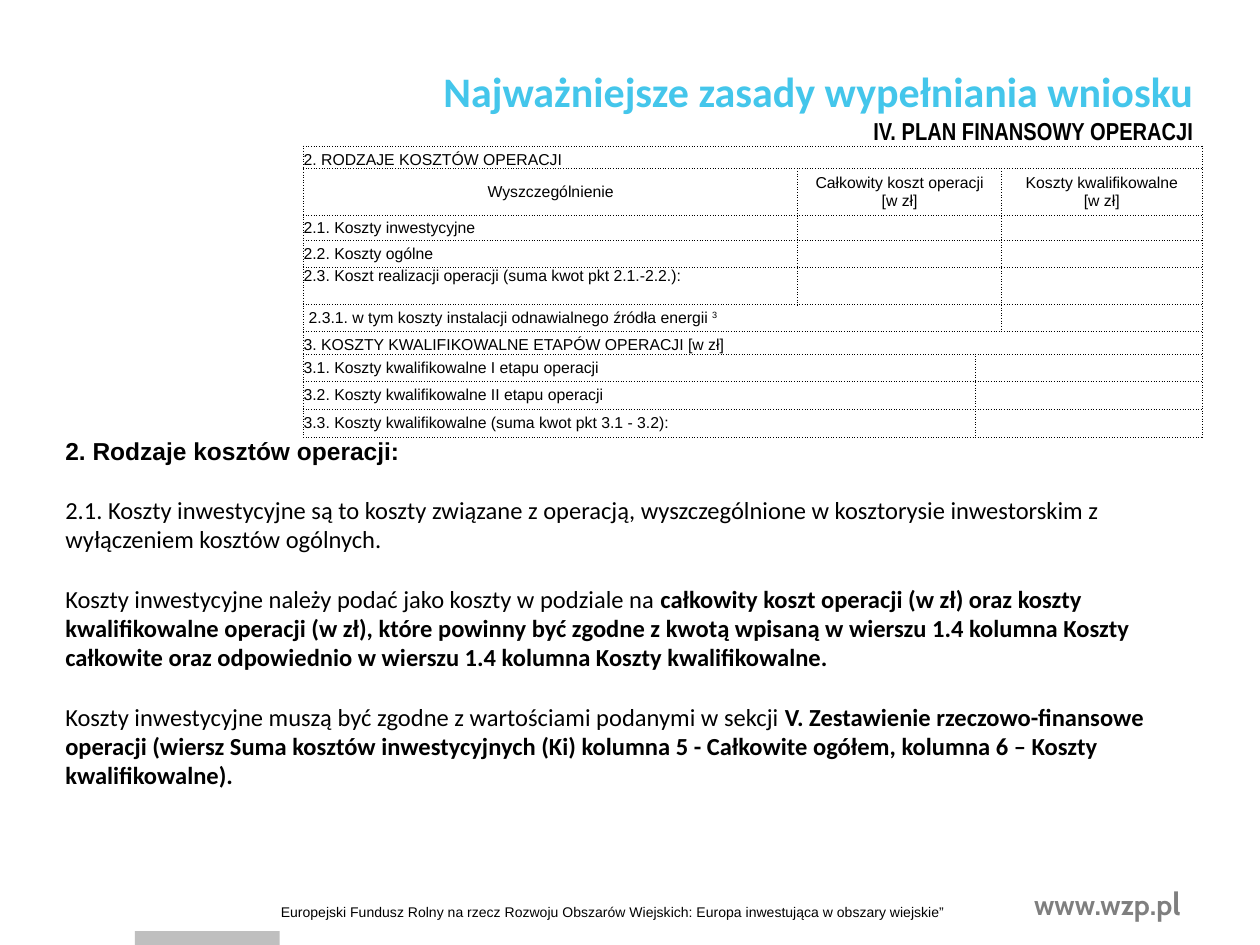
import pptx
import pptx.dml.color
import pptx.enum.shapes
import pptx.enum.text
import pptx.oxml
import pptx.oxml.ns
import pptx.util
from pptx.util import Inches

ALIGN = pptx.enum.text.PP_ALIGN
ANCHOR = pptx.enum.text.MSO_ANCHOR
BLACK = "000000"


def colour(value):
    return pptx.dml.color.RGBColor.from_string(value)


class SlideBuilder:
    """Holds the table style and the current slide."""

    cell_size = 9
    cell_font = "Arial"
    border_width = 0.5

    def __init__(self, slide):
        self.slide = slide

    def bar(self, left, top, width, height, fill):
        bar = self.slide.shapes.add_shape(
            pptx.enum.shapes.MSO_SHAPE.RECTANGLE,
            Inches(left), Inches(top), Inches(width), Inches(height))
        bar.shadow.inherit = False
        bar.fill.solid()
        bar.fill.fore_color.rgb = colour(fill)
        bar.line.fill.background()

    def span(self, para, text, size, font, bold=False, ink=BLACK):
        span = para.add_run()
        span.text = text
        span.font.size = pptx.util.Pt(size)
        span.font.name = font
        span.font.bold = bold
        span.font.color.rgb = colour(ink)
        return span

    def text(self, left, top, width, height, paras, align=ALIGN.LEFT, gap=0):
        """Each paragraph is a list of spans: (text, size, font, bold, ink)."""
        box = self.slide.shapes.add_textbox(
            Inches(left), Inches(top), Inches(width), Inches(height))
        frame = box.text_frame
        frame.word_wrap = True
        for index, spans in enumerate(paras):
            para = frame.add_paragraph() if index else frame.paragraphs[0]
            para.alignment = align
            if index and gap:
                para.space_before = pptx.util.Pt(gap)
            for span in spans:
                self.span(para, *span)

    def table(self, left, top, widths, rows):
        """Each row is (height, anchor, cells); a cell is (columns, text, align)."""
        heights = [row[0] for row in rows]
        table = self.slide.shapes.add_table(
            len(rows), len(widths), Inches(left), Inches(top),
            Inches(sum(widths)), Inches(sum(heights))).table
        table.first_row = table.horz_banding = False
        for column, width in zip(table.columns, widths):
            column.width = Inches(width)
        for number, (height, anchor, cells) in enumerate(rows):
            table.rows[number].height = Inches(height)
            for position in range(len(widths)):
                self.style_cell(table.cell(number, position), anchor)
            position = 0
            for columns, text, align in cells:
                cell = table.cell(number, position)
                if columns > 1:
                    cell.merge(table.cell(number, position + columns - 1))
                if text:
                    para = cell.text_frame.paragraphs[0]
                    para.alignment = align
                    for index, line in enumerate(text.split("\n")):
                        if index:
                            para.add_line_break()
                        self.span(para, line, self.cell_size, self.cell_font)
                position += columns
        return table

    def style_cell(self, cell, anchor):
        cell.margin_left = cell.margin_right = 0
        cell.margin_top = cell.margin_bottom = 0
        cell.vertical_anchor = anchor
        namespace = pptx.oxml.ns.nsdecls("a")
        # Small text size keeps empty cells from stretching their row
        cell.text_frame.paragraphs[0]._p.append(pptx.oxml.parse_xml(
            f'<a:endParaRPr {namespace} sz="{self.cell_size * 100}"/>'))
        for side in ("lnL", "lnR", "lnT", "lnB"):
            cell._tc.get_or_add_tcPr().append(pptx.oxml.parse_xml(
                f'<a:{side} {namespace} w="{pptx.util.Pt(self.border_width)}">'
                f'<a:solidFill><a:srgbClr val="{BLACK}"/></a:solidFill>'
                f'<a:prstDash val="dot"/></a:{side}>'))
        cell.fill.solid()
        cell.fill.fore_color.rgb = colour("FFFFFF")


def cost_row(label, spans, height, anchor=ANCHOR.MIDDLE):
    """A labelled row followed by empty cells; spans are column counts."""
    cells = [(spans[0], label, ALIGN.LEFT)]
    cells += [(columns, "", ALIGN.LEFT) for columns in spans[1:]]
    return height, anchor, cells


def main():
    deck = pptx.Presentation()
    deck.slide_width, deck.slide_height = Inches(10), Inches(7.5)
    page = SlideBuilder(deck.slides.add_slide(deck.slide_layouts[6]))

    # Footer
    page.bar(1.07, 7.39, 1.15, 0.11, "BFBFBF")
    page.text(8.11, 6.97, 1.49, 0.4, [[
        ("www.wzp.p", 16, "Cabin", True, "7F7F7F"),
        ("l", 18, "Cabin", True, "7F7F7F")]])
    page.text(2.13, 7.12, 7.08, 0.24, [[
        ("Europejski Fundusz Rolny na rzecz Rozwoju Obszarów Wiejskich: "
         "Europa inwestująca w obszary wiejskie”", 8, "Arial")]])

    # Explanation
    page.text(0.42, 3.41, 9.14, 3.64, [
        [("2. Rodzaje kosztów operacji:", 14, "Arial", True)],
        [("2.1. Koszty inwestycyjne są to koszty związane z operacją, "
          "wyszczególnione w kosztorysie inwestorskim z wyłączeniem kosztów "
          "ogólnych.", 14, "Calibri")],
        [("Koszty inwestycyjne należy podać jako koszty w podziale na ", 14, "Calibri"),
         ("całkowity koszt operacji (w zł) oraz koszty kwalifikowalne operacji "
          "(w zł), które powinny być zgodne z kwotą wpisaną w wierszu 1.4 "
          "kolumna Koszty całkowite oraz odpowiednio w wierszu 1.4 kolumna "
          "Koszty kwalifikowalne.", 14, "Calibri", True)],
        [("Koszty inwestycyjne muszą być zgodne z wartościami podanymi w sekcji ",
          14, "Calibri"),
         ("V. Zestawienie rzeczowo-finansowe operacji (wiersz Suma kosztów "
          "inwestycyjnych (Ki) kolumna 5 - Całkowite ogółem, kolumna 6 – "
          "Koszty kwalifikowalne).", 14, "Calibri", True)],
    ], gap=17)

    # Title
    page.text(3.15, 0.47, 6.42, 0.98, [
        [("Najważniejsze zasady wypełniania wniosku", 24, "Calibri", True, "44C6EB")],
        [("IV. PLAN FINANSOWY OPERACJI", 14, "Arial Narrow", True)],
    ], align=ALIGN.RIGHT)

    # Cost table
    thirds, halves = (1, 2, 1), (2, 2)
    table = page.table(2.41, 1.16, [3.92, 1.41, 0.21, 1.59], [
        cost_row("2. RODZAJE KOSZTÓW OPERACJI", (4,), 0.18, ANCHOR.BOTTOM),
        (0.37, ANCHOR.MIDDLE, [
            (1, "Wyszczególnienie", ALIGN.CENTER),
            (2, "Całkowity koszt operacji\n[w zł]", ALIGN.CENTER),
            (1, "Koszty kwalifikowalne\n[w zł]", ALIGN.CENTER)]),
        cost_row("2.1. Koszty inwestycyjne", thirds, 0.2),
        cost_row("2.2. Koszty ogólne", thirds, 0.21),
        cost_row("2.3. Koszt realizacji operacji (suma kwot pkt 2.1.-2.2.):",
                 thirds, 0.3, ANCHOR.TOP),
        cost_row("2.3.1. w tym koszty instalacji odnawialnego źródła energii ",
                 (3, 1), 0.21),
        cost_row("3. KOSZTY KWALIFIKOWALNE ETAPÓW OPERACJI [w zł]",
                 (4,), 0.18, ANCHOR.BOTTOM),
        cost_row("3.1. Koszty kwalifikowalne I etapu operacji", halves, 0.22),
        cost_row("3.2. Koszty kwalifikowalne II etapu operacji", halves, 0.22),
        cost_row("3.3. Koszty kwalifikowalne (suma kwot pkt 3.1 - 3.2):",
                 halves, 0.22),
    ])

    # Footnote mark on the indented energy row
    energy = table.cell(5, 0)
    energy.margin_left = Inches(0.04)
    mark = page.span(energy.text_frame.paragraphs[0], "3",
                     page.cell_size, page.cell_font)
    mark.font._element.set("baseline", "30000")

    deck.save("out.pptx")


if __name__ == "__main__":
    main()
